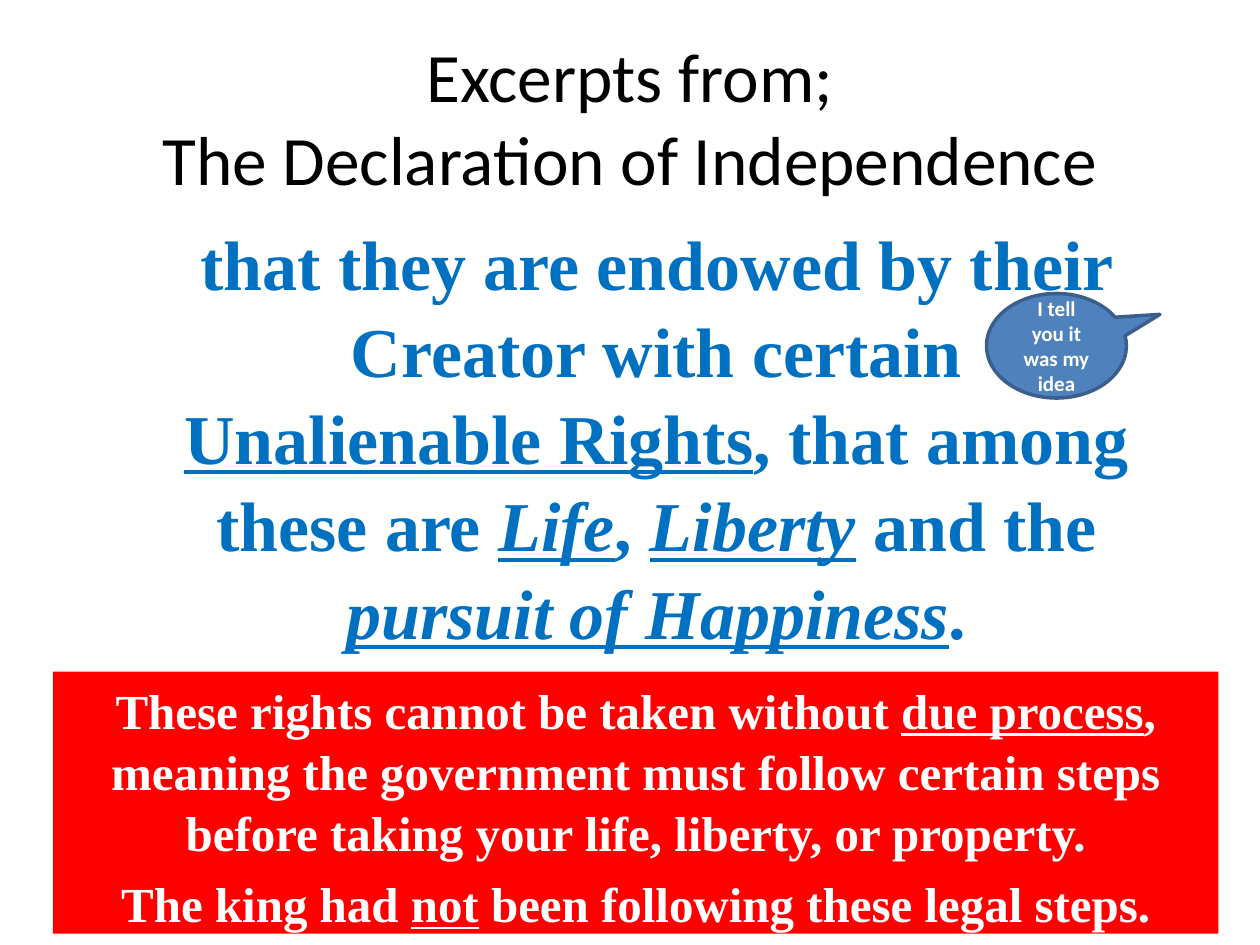
from dataclasses import dataclass

from pptx import Presentation
from pptx.dml.color import RGBColor
from pptx.enum.shapes import MSO_SHAPE as Shape
from pptx.enum.text import MSO_ANCHOR as Anchor, MSO_AUTO_SIZE as AutoSize, PP_ALIGN as Align
from pptx.util import Inches, Pt


@dataclass(frozen=True)
class Theme:
    sans: str = "Calibri"
    serif: str = "Times New Roman"
    black: RGBColor = RGBColor(0x00, 0x00, 0x00)
    white: RGBColor = RGBColor(0xFF, 0xFF, 0xFF)
    quote_blue: RGBColor = RGBColor(0x00, 0x70, 0xC0)
    callout_fill: RGBColor = RGBColor(0x4F, 0x81, 0xBD)
    callout_line: RGBColor = RGBColor(0x3A, 0x5F, 0x8C)
    red: RGBColor = RGBColor(0xFF, 0x00, 0x00)
    title_size: float = 39.6
    quote_size: float = 40
    rights_size: float = 28
    callout_size: float = 12
    serif_spacing: float = 1.04


THEME = Theme()
BREAK = "\n"


def place(shape, box):
    shape.left, shape.top, shape.width, shape.height = (Inches(v) for v in box)


def write(paragraph, runs, font, size, color, bold=True):
    """Add centred runs; each is (text, style), style holding u and/or i."""
    paragraph.alignment = Align.CENTER
    for text, style in runs:
        if text == BREAK:
            paragraph.add_line_break()
            continue
        run = paragraph.add_run()
        run.text = text
        run.font.name, run.font.size, run.font.bold = font, Pt(size), bold
        run.font.color.rgb = color
        run.font.underline = "u" in style
        run.font.italic = "i" in style


def space_serif(paragraph, size):
    paragraph.space_before = Pt(size * 0.2)
    paragraph.line_spacing = THEME.serif_spacing


def add_panel(slide, kind, box, fill, anchor):
    panel = slide.shapes.add_shape(kind, *(Inches(v) for v in box))
    panel.shadow.inherit = False
    panel.fill.solid()
    panel.fill.fore_color.rgb = fill
    panel.text_frame.word_wrap = True
    panel.text_frame.vertical_anchor = anchor
    return panel


def fill_title(slide, box):
    title = slide.shapes.title
    place(title, box)
    title.text_frame.auto_size = AutoSize.NONE
    title.text_frame.vertical_anchor = Anchor.MIDDLE
    lines = [("Excerpts from;", ""), (BREAK, ""), ("The Declaration of Independence", "")]
    write(title.text_frame.paragraphs[0], lines, THEME.sans, THEME.title_size,
          THEME.black, bold=False)


def fill_quote(slide, box):
    quote = slide.placeholders[1]
    place(quote, box)
    quote.text_frame.auto_size = AutoSize.NONE
    passage = quote.text_frame.paragraphs[0]
    # No bullet, no hanging indent
    properties = passage._p.get_or_add_pPr()
    properties.set("marL", "0")
    properties.set("indent", "0")
    space_serif(passage, THEME.quote_size)
    properties.append(properties.makeelement(
        "{http://schemas.openxmlformats.org/drawingml/2006/main}buNone", {}))
    write(passage, [
        ("that they are endowed by their Creator with certain", ""), (BREAK, ""),
        ("Unalienable Rights", "u"), (", that among these are ", ""),
        ("Life", "iu"), (", ", ""), ("Liberty", "iu"), (" and the ", ""),
        ("pursuit of Happiness", "iu"), (".", ""),
    ], THEME.serif, THEME.quote_size, THEME.quote_blue)


def add_callout(slide, box):
    callout = add_panel(slide, Shape.OVAL_CALLOUT, box, THEME.callout_fill, Anchor.MIDDLE)
    callout.adjustments[0], callout.adjustments[1] = 0.74, -0.3
    callout.line.color.rgb = THEME.callout_line
    callout.line.width = Pt(2)
    write(callout.text_frame.paragraphs[0], [("I tell you it was my idea", "")],
          THEME.sans, THEME.callout_size, THEME.white)


def add_rights(slide, box):
    rights = add_panel(slide, Shape.RECTANGLE, box, THEME.red, Anchor.TOP)
    rights.line.fill.background()
    statements = [
        [("These rights cannot be taken without ", ""), ("due process", "u"),
         (", meaning the government must follow certain steps before taking your "
          "life, liberty, or property.", "")],
        [("The king had ", ""), ("not", "u"),
         (" been following these legal steps.", "")],
    ]
    frame = rights.text_frame
    for index, runs in enumerate(statements):
        statement = frame.add_paragraph() if index else frame.paragraphs[0]
        space_serif(statement, THEME.rights_size)
        write(statement, runs, THEME.serif, THEME.rights_size, THEME.white)


def main():
    deck = Presentation()
    deck.slide_width, deck.slide_height = Inches(10), Inches(7.5)
    slide = deck.slides.add_slide(deck.slide_layouts[1])
    fill_quote(slide, (0.92, 1.67, 8.58, 3.75))
    fill_title(slide, (0.5, 0.3, 9, 1.25))
    add_callout(slide, (7.83, 2.33, 1.11, 0.83))
    add_rights(slide, (0.42, 5.33, 9.25, 2.08))
    deck.save("out.pptx")


if __name__ == "__main__":
    main()
